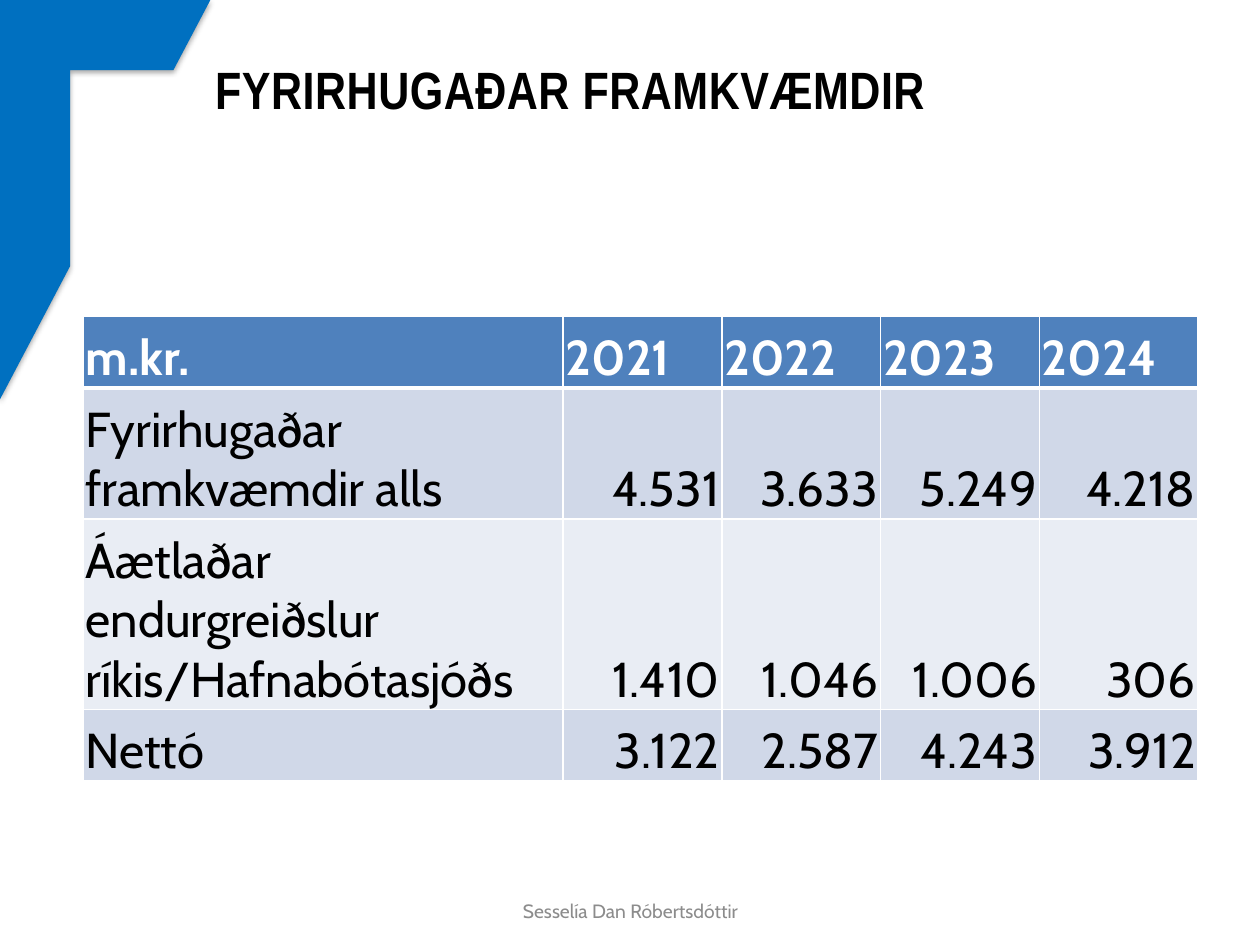
from lxml.etree import SubElement
from pptx import Presentation
from pptx.dml.color import RGBColor
from pptx.enum.shapes import MSO_SHAPE
from pptx.enum.text import MSO_ANCHOR, PP_ALIGN
from pptx.oxml import parse_xml
from pptx.oxml.ns import nsdecls, qn
from pptx.util import Inches, Pt

COLORS = {
    "blue": "0070C0", "head": "4F81BD", "odd": "D0D8E8", "even": "E9EDF4",
    "white": "FFFFFF", "black": "000000", "gray": "8C8C8C",
}
ROWS = [
    ("m.kr.", "2021", "2022", "2023", "2024"),
    ("Fyrirhugaðar framkvæmdir alls", "4.531", "3.633", "5.249", "4.218"),
    ("Áætlaðar endurgreiðslur ríkis/Hafnabótasjóðs", "1.410", "1.046", "1.006", "306"),
    ("Nettó", "3.122", "2.587", "4.243", "3.912"),
]
WIDTHS = [3.81] + [1.26] * 4
HEIGHTS = [0.57, 1.04, 1.51, 0.57]


def color(name):
    return RGBColor.from_string(COLORS[name])


class Deck:
    font = "Cabin"

    def __init__(self):
        self.show = Presentation()
        self.show.slide_width = Inches(10)
        self.show.slide_height = Inches(7.5)
        self.slide = self.show.slides.add_slide(self.show.slide_layouts[6])

    def run(self, para, text, size, tint, bold=False, font=None):
        run = para.add_run()
        run.text = text
        run.font.name = font or self.font
        run.font.size = Pt(size)
        run.font.bold = bold
        run.font.color.rgb = color(tint)
        return run

    def corner(self, *area):
        shape = self.slide.shapes.add_shape(MSO_SHAPE.HALF_FRAME, *map(Inches, area))
        shape.fill.solid()
        shape.fill.fore_color.rgb = color("blue")
        shape.line.fill.background()
        shape.shadow.inherit = False
        effects = shape._element.spPr.find(qn("a:effectLst"))
        shade = SubElement(effects, qn("a:outerShdw"), blurRad=str(Pt(3.1)),
                           dist=str(Pt(1.8)), dir="5400000", rotWithShape="0")
        tint = SubElement(shade, qn("a:srgbClr"), val=COLORS["black"])
        SubElement(tint, qn("a:alpha"), val="35000")

    def box(self, *area):
        frame = self.slide.shapes.add_textbox(*map(Inches, area)).text_frame
        frame.word_wrap = True
        frame.vertical_anchor = MSO_ANCHOR.MIDDLE
        return frame

    def title(self, text, *area):
        frame = self.box(*area)
        frame.margin_bottom = Inches(0.5)
        run = self.run(frame.paragraphs[0], text, 30, "black", True, "Arial Narrow")
        run.font._element.set("spc", "30")

    def footer(self, text, *area):
        para = self.box(*area).paragraphs[0]
        para.alignment = PP_ALIGN.CENTER
        para.space_after = Pt(6)
        self.run(para, text, 11, "gray")

    def edges(self, cell, row):
        props = cell._tc.get_or_add_tcPr()
        wide = {0: "B", 1: "T"}.get(row)
        for spot, side in enumerate("LRTB"):
            width = Pt(3 if side == wide else 1)
            props.insert(spot, parse_xml(
                f'<a:ln{side} {nsdecls("a")} w="{width}"><a:solidFill>'
                f'<a:srgbClr val="{COLORS["white"]}"/></a:solidFill></a:ln{side}>'))

    def cell(self, cell, text, row, col):
        cell.margin_left = cell.margin_right = cell.margin_top = Inches(0.02)
        cell.margin_bottom = 0
        cell.vertical_anchor = MSO_ANCHOR.BOTTOM
        cell.fill.solid()
        fill = "head" if row == 0 else "odd" if row % 2 else "even"
        cell.fill.fore_color.rgb = color(fill)
        self.edges(cell, row)
        para = cell.text_frame.paragraphs[0]
        if row and col:
            para.alignment = PP_ALIGN.RIGHT
        self.run(para, text, 28, "black" if row else "white", row == 0)

    def table(self, rows, left, top, widths, heights):
        area = map(Inches, (left, top, sum(widths), sum(heights)))
        table = self.slide.shapes.add_table(len(rows), len(widths), *area).table
        for col, width in zip(table.columns, widths):
            col.width = Inches(width)
        for row, height in zip(table.rows, heights):
            row.height = Inches(height)
        for r, row in enumerate(rows):
            for c, text in enumerate(row):
                self.cell(table.cell(r, c), text, r, c)


def main():
    deck = Deck()
    deck.corner(0, 0, 1.67, 3.17)
    deck.title("FYRIRHUGAÐAR FRAMKVÆMDIR", 1.61, 0.3, 8.07, 1.25)
    deck.footer("Sesselía Dan Róbertsdóttir", 3.42, 7.07, 3.17, 0.32)
    deck.table(ROWS, 0.66, 2.51, WIDTHS, HEIGHTS)
    deck.show.save("out.pptx")


if __name__ == "__main__":
    main()
